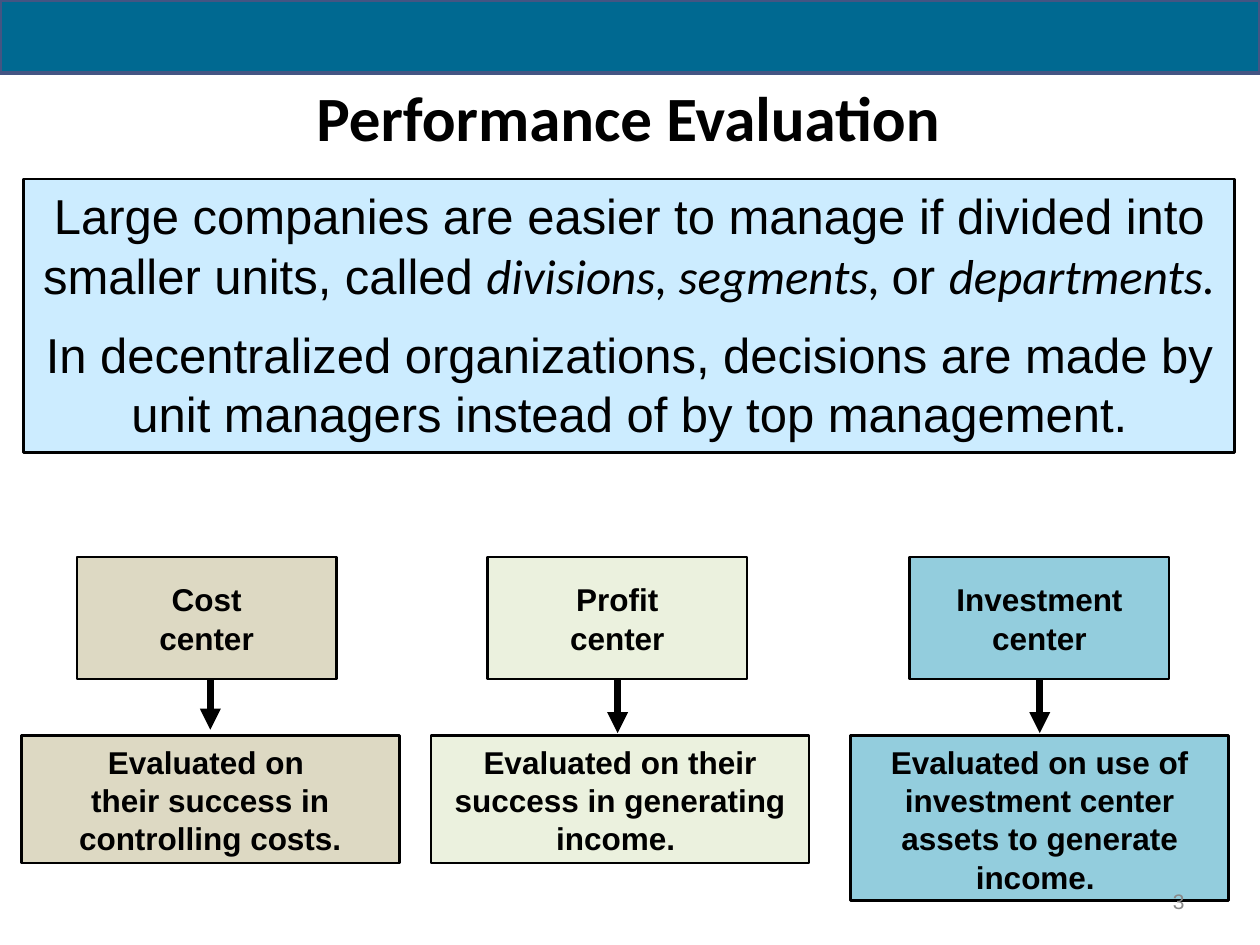
"""Build the Performance Evaluation slide with its three kinds of responsibility center."""
from dataclasses import dataclass

from lxml.etree import SubElement
from pptx import Presentation
from pptx.dml.color import RGBColor as Rgb
from pptx.enum.shapes import MSO_CONNECTOR as Connector, MSO_SHAPE as Shape
from pptx.enum.text import MSO_ANCHOR as Anchor, MSO_AUTO_SIZE as AutoSize, PP_ALIGN as Align
from pptx.oxml.ns import qn
from pptx.util import Cm, Pt


@dataclass(frozen=True)
class Theme:
    band: str = "006991"
    band_line: str = "445583"
    ink: str = "000000"
    muted: str = "898989"
    intro: str = "CCECFF"
    cost: str = "DDD9C3"
    profit: str = "EBF1DE"
    investment: str = "93CDDD"
    title_size: int = 36
    intro_size: int = 28
    label_size: int = 18
    number_size: int = 12
    body_font: str = "Arial"
    accent_font: str = "Calibri"


theme = Theme()


def add_box(left, top, width, height, fill, line=theme.ink, line_width=1.5):
    box = page.shapes.add_shape(Shape.RECTANGLE, Cm(left), Cm(top), Cm(width), Cm(height))
    box.shadow.inherit = False
    box.fill.solid()
    box.fill.fore_color.rgb = Rgb.from_string(fill)
    box.line.color.rgb = Rgb.from_string(line)
    box.line.width = Pt(line_width)
    box.text_frame.word_wrap = True
    box.text_frame.vertical_anchor = Anchor.TOP
    return box


def add_text(para, text, size, font=theme.body_font, color=theme.ink, bold=False, italic=False):
    for index, line in enumerate(text.split("\n")):
        if index:
            para.add_line_break()
        span = para.add_run()
        span.text = line
        span.font.size = Pt(size)
        span.font.name = font
        span.font.bold = bold
        span.font.italic = italic
        span.font.color.rgb = Rgb.from_string(color)


deck = Presentation()
deck.slide_width, deck.slide_height = Cm(25.4), Cm(19.05)
page = deck.slides.add_slide(deck.slide_layouts[5])

add_box(0, 0, 25.4, 1.47, theme.band, theme.band_line, 2.25)

title = page.shapes.title
title.left, title.top, title.width, title.height = Cm(1.02), Cm(0.76), Cm(23.29), Cm(3.18)
title.text_frame.vertical_anchor = Anchor.MIDDLE
para = title.text_frame.paragraphs[0]
para.alignment = Align.CENTER
add_text(para, "Performance Evaluation", theme.title_size, theme.accent_font, bold=True)

intro = add_box(0.48, 3.61, 24.41, 5.51, theme.intro).text_frame
intro.auto_size = AutoSize.SHAPE_TO_FIT_TEXT
statements = [
    [
        ("Large companies are easier to manage if divided into smaller units, called ", False),
        ("divisions, segments, ", True),
        ("or ", False),
        ("departments.", True),
    ],
    [
        ("In decentralized organizations, decisions are made by unit managers "
         "instead of by top management.", False),
    ],
]
for index, statement in enumerate(statements):
    para = intro.add_paragraph() if index else intro.paragraphs[0]
    para.alignment = Align.CENTER
    para.line_spacing = Pt(34)
    para.space_before = Pt(11 if index else 0)
    for text, accent in statement:
        font = theme.accent_font if accent else theme.body_font
        add_text(para, text, theme.intro_size, font, italic=accent)

centers = [
    ("Cost\ncenter", "Evaluated on \ntheir success in\ncontrolling costs.",
     theme.cost, 1.55, 0.43, 2.57, 4.24, 14.71),
    ("Profit\ncenter", "Evaluated on their success in generating income. ",
     theme.profit, 9.83, 8.69, 2.57, 12.45, 14.78),
    ("Investment\ncenter", "Evaluated on use of investment center assets to generate income. ",
     theme.investment, 18.34, 17.15, 3.33, 20.96, 14.78),
]
for name, measure, fill, name_left, measure_left, measure_height, arrow_x, arrow_end in centers:
    arrow = page.shapes.add_connector(
        Connector.STRAIGHT, Cm(arrow_x), Cm(arrow_end - 2.4), Cm(arrow_x), Cm(arrow_end))
    arrow.line.color.rgb = Rgb.from_string(theme.ink)
    arrow.line.width = Pt(4)
    SubElement(arrow.line._get_or_add_ln(), qn("a:tailEnd"), type="triangle")
    SubElement(arrow._element.spPr, qn("a:effectLst"))

    measure_box = add_box(measure_left, 14.83, 7.62, measure_height, fill)
    measure_box.text_frame.auto_size = AutoSize.SHAPE_TO_FIT_TEXT
    name_box = add_box(name_left, 11.23, 5.23, 2.46, fill)
    name_box.text_frame.word_wrap = False
    name_box.text_frame.vertical_anchor = Anchor.MIDDLE
    for box, text in ((measure_box, measure), (name_box, name)):
        para = box.text_frame.paragraphs[0]
        para.alignment = Align.CENTER
        para.line_spacing = Pt(22)
        add_text(para, text, theme.label_size, bold=True)

number = page.shapes.add_textbox(Cm(18.21), Cm(17.65), Cm(5.92), Cm(1.02)).text_frame
number.word_wrap = True
number.vertical_anchor = Anchor.MIDDLE
para = number.paragraphs[0]
para.alignment = Align.RIGHT
add_text(para, "3", theme.number_size, color=theme.muted)

deck.save("out.pptx")
